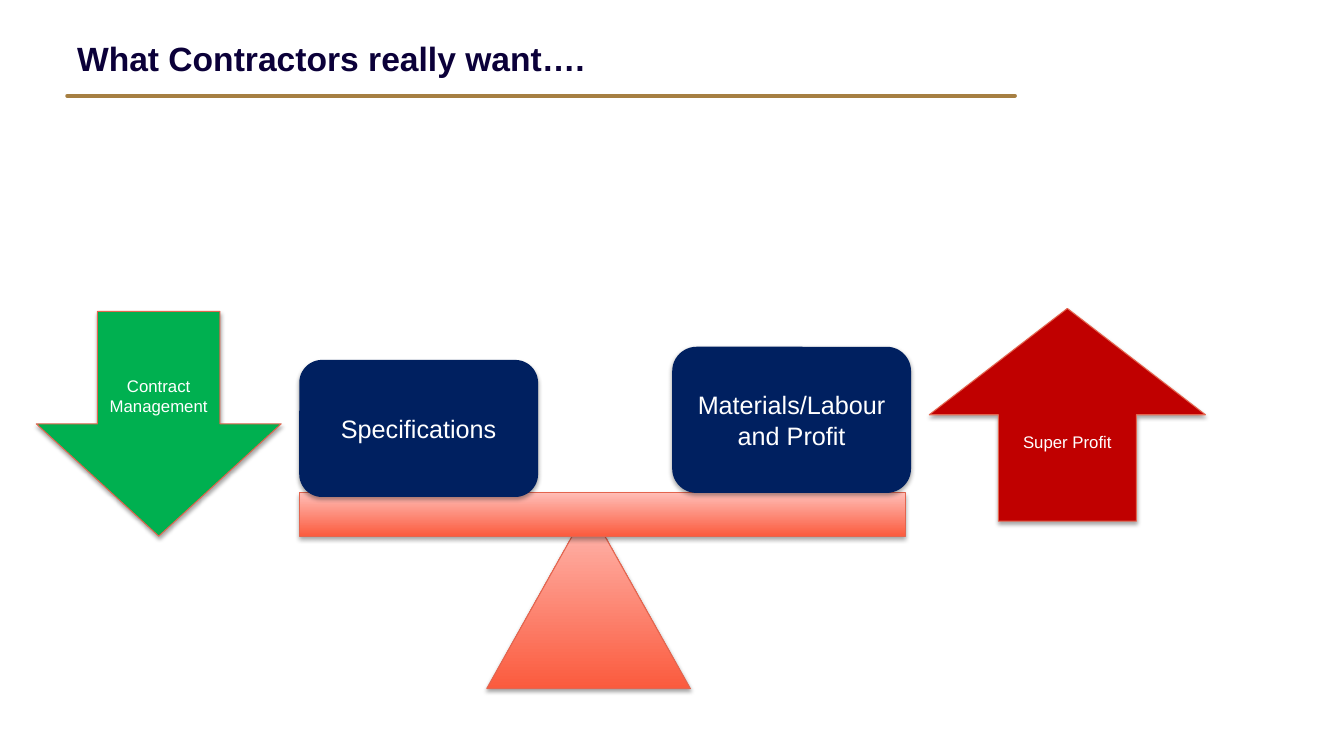
from lxml import etree
from pptx import Presentation
from pptx.dml.color import RGBColor
from pptx.enum import shapes as sh, text as tx
from pptx.oxml import ns
from pptx.util import Pt

HEX = {
    "title": "0B0039", "rule": "A67F42", "navy": "002060", "red": "C00000",
    "green": "00B050", "edge": "E3654F", "deep": "FB5B3E", "pale": "FFBDB6",
    "white": "FFFFFF", "black": "000000",
}
KIND = sh.MSO_SHAPE


def rgb(name):
    return RGBColor.from_string(HEX[name])


def write(frame, words, size, color, bold=False):
    frame.word_wrap = True
    para = frame.paragraphs[0]
    para.text = words
    font = para.runs[0].font
    font.name, font.size, font.bold = "Arial", Pt(size), bold
    font.color.rgb = rgb(color)
    return para


def shade(shape):
    """Soft shadow straight below the shape."""
    shape.shadow.inherit = False
    effects = shape._element.spPr.find(ns.qn("a:effectLst"))
    outer = etree.SubElement(effects, ns.qn("a:outerShdw"), blurRad=str(Pt(3.1)),
                             dist=str(Pt(1.8)), dir="5400000", rotWithShape="0")
    color = etree.SubElement(outer, ns.qn("a:srgbClr"), val=HEX["black"])
    etree.SubElement(color, ns.qn("a:alpha"), val="35000")


def block(slide, kind, box, fill=None, edge=True, words="", size=12):
    """Shadowed shape; without a fill colour it takes the coral gradient."""
    shape = slide.shapes.add_shape(kind, *map(Pt, box))
    shade(shape)
    if fill:
        shape.fill.solid()
        shape.fill.fore_color.rgb = rgb(fill)
    else:
        shape.fill.gradient()
        shape.fill.gradient_angle = 90
        for stop, name in zip(shape.fill.gradient_stops, ("deep", "pale")):
            stop.color.rgb = rgb(name)
    if edge:
        shape.line.color.rgb = rgb("edge")
        shape.line.width = Pt(0.75)
    else:
        shape.line.fill.background()
    if words:
        frame = shape.text_frame
        frame.vertical_anchor = tx.MSO_ANCHOR.MIDDLE
        write(frame, words, size, "white").alignment = tx.PP_ALIGN.CENTER


def header(slide, left, top, width, height):
    # Gold rule
    y = Pt(top + 44.6)
    rule = slide.shapes.add_connector(sh.MSO_CONNECTOR.STRAIGHT,
                                      Pt(left), y, Pt(left + 677), y)
    rule.line.color.rgb = rgb("rule")
    rule.line.width = Pt(2.75)
    rule.line._get_or_add_ln().set("cap", "rnd")
    etree.SubElement(rule._element.spPr, ns.qn("a:effectLst"))
    # Title
    title = slide.shapes.add_textbox(Pt(left), Pt(top), Pt(width), Pt(height))
    write(title.text_frame, "What Contractors really want….", 24, "title", True)


def scale(slide, left, top, width, height):
    """Seesaw: pivot, beam and the two loads on it."""
    beam = top + 104.4
    pivot = beam + 10.1
    block(slide, KIND.ISOSCELES_TRIANGLE,
          (left + 133.9, pivot, 145.4, top + height - pivot))
    block(slide, KIND.RECTANGLE, (left, beam, width, 31))
    loads = (("Specifications", 0, 9.4, 97.9),
             ("Materials/Labour and Profit", 266.4, 0, 104.4))
    for words, dx, dy, tall in loads:
        block(slide, KIND.ROUNDED_RECTANGLE, (left + dx, top + dy, 170.6, tall),
              "navy", False, words, 18)


def arrows(slide, left, top, width, height):
    """Rising profit on the right, falling management on the left."""
    block(slide, KIND.UP_ARROW, (left + width - 197.3, top, 197.3, 151.9),
          "red", words="Super Profit")
    block(slide, KIND.DOWN_ARROW, (left, top + 2.2, 175, height - 2.2),
          "green", words="Contract Management")


def main():
    deck = Presentation()
    deck.slide_width, deck.slide_height = Pt(960), Pt(540)
    slide = deck.slides.add_slide(deck.slide_layouts[6])
    header(slide, 48, 23.8, 864, 58.3)
    scale(slide, 213.8, 247.7, 432.7, 244.1)
    arrows(slide, 25.9, 220.3, 835.2, 162.7)
    deck.save("out.pptx")


if __name__ == "__main__":
    main()
